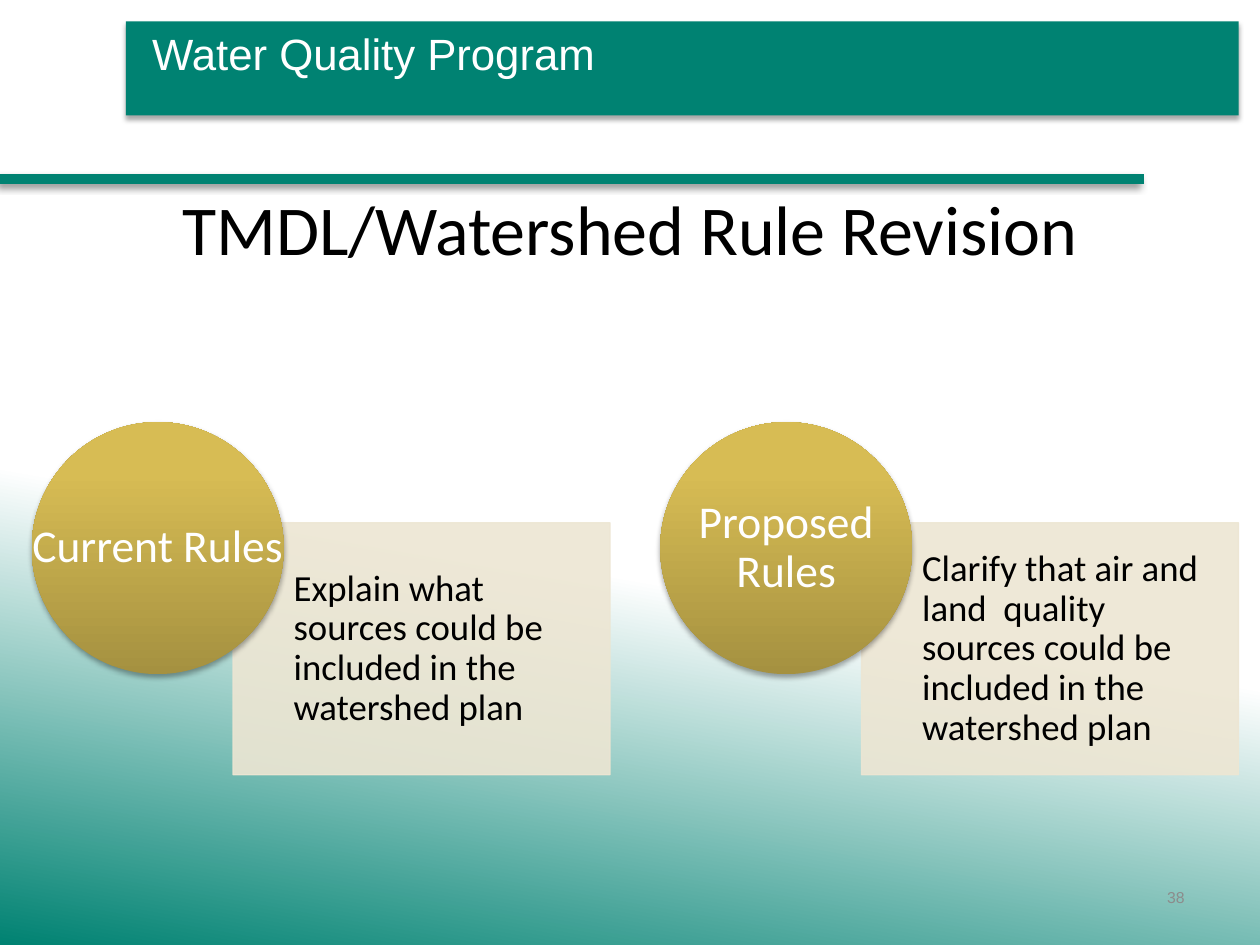
from lxml import etree
from pptx import Presentation
from pptx.dml.color import RGBColor
from pptx.enum import shapes, text
from pptx.oxml.ns import qn
from pptx.util import Cm, Pt

TEAL = RGBColor(0x00, 0x82, 0x72)
WHITE = RGBColor(0xFF, 0xFF, 0xFF)
BLACK = RGBColor(0x00, 0x00, 0x00)
GREY = RGBColor(0x8C, 0x8C, 0x8C)
SAND = RGBColor(0xED, 0xE6, 0xD3)
GOLD_STOPS = [(0, RGBColor(0xA5, 0x91, 0x40)),
              (80, RGBColor(0xD7, 0xBC, 0x54)),
              (100, RGBColor(0xDA, 0xBF, 0x52))]

LEFT, CENTER, RIGHT = (text.PP_ALIGN.LEFT, text.PP_ALIGN.CENTER,
                       text.PP_ALIGN.RIGHT)
TOP, MIDDLE = text.MSO_ANCHOR.TOP, text.MSO_ANCHOR.MIDDLE


def add_color(parent, color, alpha=None):
    node = etree.SubElement(parent, qn("a:srgbClr"), val=str(color))
    if alpha is not None:
        etree.SubElement(node, qn("a:alpha"), val=str(alpha * 1000))


def set_gradient(fill, element, stops, angle):
    """Fill with (percent, colour) stops; angle is counter-clockwise."""
    fill.gradient()
    fill.gradient_angle = angle
    stop_list = element.find(".//" + qn("a:gsLst"))
    for stop in list(stop_list):
        stop_list.remove(stop)
    for percent, color in stops:
        stop = etree.SubElement(stop_list, qn("a:gs"), pos=str(percent * 1000))
        add_color(stop, color)


def set_shadow(element, alpha=35, blur=3.1, distance=1.8, direction=90):
    properties = element.spPr
    effects = properties.find(qn("a:effectLst"))
    if effects is None:
        effects = etree.SubElement(properties, qn("a:effectLst"))
    shadow = etree.SubElement(
        effects, qn("a:outerShdw"), blurRad=str(Pt(blur)),
        dist=str(Pt(distance)), dir=str(direction * 60000), rotWithShape="0")
    add_color(shadow, BLACK, alpha)


def write(frame, words, font="Calibri", size=21, color=BLACK, align=LEFT,
          spacing=None):
    paragraph = frame.paragraphs[0]
    paragraph.alignment = align
    paragraph.line_spacing = spacing
    run = paragraph.add_run()
    run.text = words
    run.font.name = font
    run.font.size = Pt(size)
    run.font.color.rgb = color


class SlideBuilder:
    """Holds the current slide and draws its elements; lengths are in cm."""

    def __init__(self, slide):
        self.slide = slide

    def background(self):
        set_gradient(self.slide.background.fill, self.slide.element,
                     [(59, WHITE), (100, TEAL)], 260)

    def shape(self, kind, box):
        shape = self.slide.shapes.add_shape(kind, *map(Cm, box))
        shape.shadow.inherit = False
        shape.line.fill.background()
        return shape

    def banner(self, box):
        banner = self.shape(shapes.MSO_SHAPE.RECTANGLE, box)
        banner.fill.solid()
        banner.fill.fore_color.rgb = TEAL
        set_shadow(banner.element)

    def rule(self, y, end):
        rule = self.slide.shapes.add_connector(
            shapes.MSO_CONNECTOR.STRAIGHT, 0, Cm(y), Cm(end), Cm(y))
        rule.line.color.rgb = TEAL
        rule.line.width = Pt(6)
        set_shadow(rule._element, 40, 4, 3, 135)

    def panel(self, box):
        panel = self.shape(shapes.MSO_SHAPE.RECTANGLE, box)
        panel.fill.solid()
        panel.fill.fore_color.rgb = SAND
        panel.line.color.rgb = SAND
        panel.line.width = Pt(0.75)
        for color in panel.element.spPr.iter(qn("a:srgbClr")):
            etree.SubElement(color, qn("a:alpha"), val="90000")

    def disc(self, box):
        disc = self.shape(shapes.MSO_SHAPE.OVAL, box)
        set_gradient(disc.fill, disc.element, GOLD_STOPS, 90)
        set_shadow(disc.element)

    def label(self, box, words, insets=(0, 0, 0, 0), anchor=MIDDLE, **style):
        frame = self.slide.shapes.add_textbox(*map(Cm, box)).text_frame
        frame.word_wrap = True
        frame.vertical_anchor = anchor
        (frame.margin_left, frame.margin_top,
         frame.margin_right, frame.margin_bottom) = map(Cm, insets)
        write(frame, words, **style)

    def rule_set(self, left, heading, body):
        """A disc with its heading, overlapping a panel with its body."""
        side = 5.08
        disc_box = (left, 8.51, side, side)
        self.panel((left + 4.06, 10.54, 7.6, side))
        self.label((left + 5.28, 10.54, 6.38, side), body,
                   insets=(0, 0.41, 0.41, 0.41), spacing=0.9)
        self.disc(disc_box)
        self.label(disc_box, heading, size=26, color=WHITE, align=CENTER,
                   spacing=0.9)


def main():
    deck = Presentation()
    deck.slide_width, deck.slide_height = Cm(25.4), Cm(19.05)
    page = SlideBuilder(deck.slides.add_slide(deck.slide_layouts[6]))

    page.background()
    page.banner((2.54, 0.43, 22.43, 1.9))
    page.label((2.54, 0.43, 22.43, 1.42), "Water Quality Program",
               insets=(0.53,) * 4, font="Arial", size=25, color=WHITE,
               spacing=0.9)
    page.rule(3.61, 23.06)
    page.label((18.21, 17.58, 5.92, 1.02), "38",
               insets=(0.25, 0.13, 0.25, 0.13), font="Arial", size=9,
               color=GREY, align=RIGHT)
    page.label((1.27, 3.61, 22.86, 2.54), "TMDL/Watershed Rule Revision",
               insets=(0.25, 0.13, 0.25, 0.13), anchor=TOP, size=40,
               align=CENTER)

    rule_sets = [
        ("Current Rules",
         "Explain what sources could be included in the watershed plan"),
        ("Proposed Rules",
         "Clarify that air and land  quality sources could be included in "
         "the watershed plan"),
    ]
    for index, (heading, body) in enumerate(rule_sets):
        page.rule_set(0.64 + index * 12.67, heading, body)

    deck.save("out.pptx")


if __name__ == "__main__":
    main()
